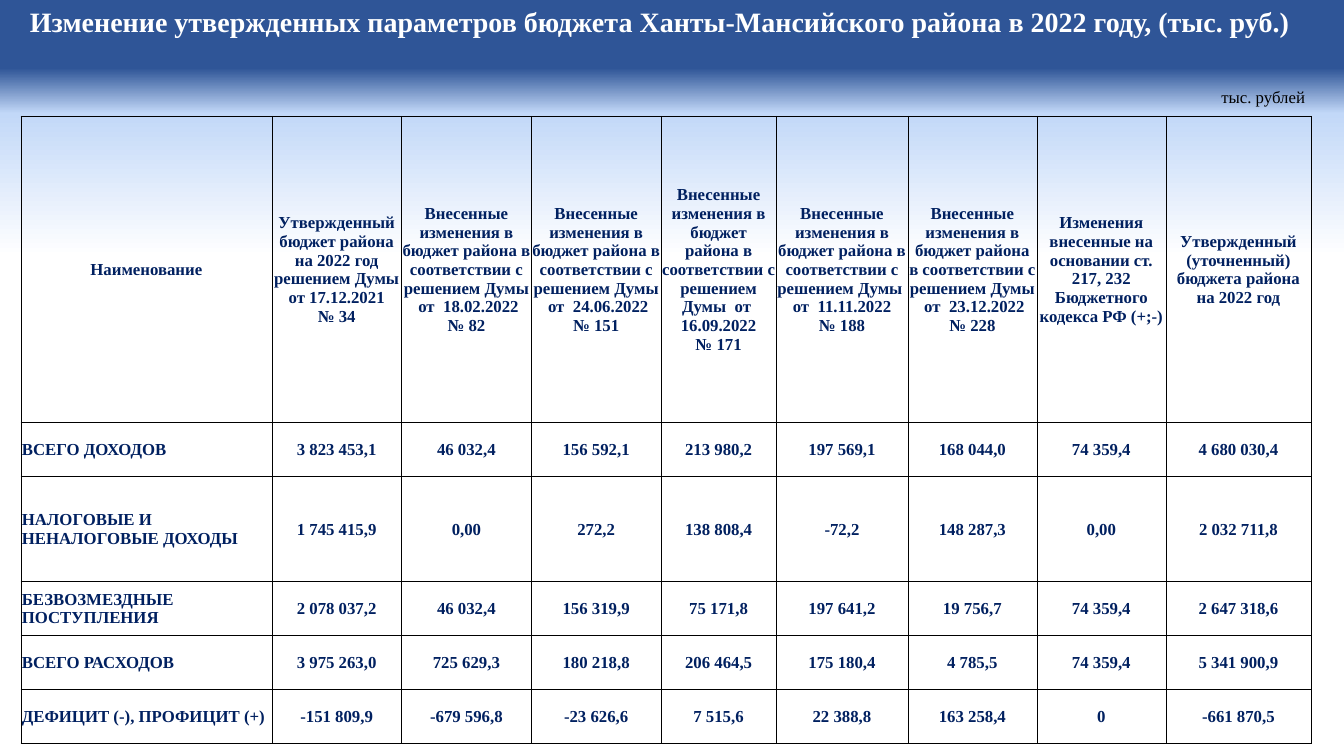
from pptx import Presentation
from pptx.dml.color import RGBColor
from pptx.enum.text import MSO_ANCHOR, PP_ALIGN
from pptx.oxml import parse_xml
from pptx.oxml.ns import nsdecls
from pptx.util import Cm, Pt

TITLE = "Изменение утвержденных параметров бюджета Ханты-Мансийского района в 2022 году, (тыс. руб.)"
UNIT = "тыс. рублей"

AMENDMENTS = [
    ("18.02.2022", "82"),
    ("24.06.2022", "151"),
    ("16.09.2022", "171"),
    ("11.11.2022", "188"),
    ("23.12.2022", "228"),
]
HEADER = [
    "Наименование",
    "Утвержденный бюджет района на 2022 год решением Думы от 17.12.2021\v№ 34",
    *(
        f"Внесенные изменения в бюджет района в соответствии с решением Думы  от  {date}\n№ {number}"
        for date, number in AMENDMENTS
    ),
    "Изменения внесенные на основании ст. 217, 232 Бюджетного кодекса РФ (+;-)",
    "Утвержденный (уточненный) бюджета района на 2022 год",
]
BUDGET = [
    ("ВСЕГО ДОХОДОВ", "3 823 453,1", "46 032,4", "156 592,1", "213 980,2",
     "197 569,1", "168 044,0", "74 359,4", "4 680 030,4"),
    ("НАЛОГОВЫЕ И НЕНАЛОГОВЫЕ ДОХОДЫ", "1 745 415,9", "0,00", "272,2", "138 808,4",
     "-72,2", "148 287,3", "0,00", "2 032 711,8"),
    ("БЕЗВОЗМЕЗДНЫЕ ПОСТУПЛЕНИЯ", "2 078 037,2", "46 032,4", "156 319,9", "75 171,8",
     "197 641,2", "19 756,7", "74 359,4", "2 647 318,6"),
    ("ВСЕГО РАСХОДОВ", "3 975 263,0", "725 629,3", "180 218,8", "206 464,5",
     "175 180,4", "4 785,5", "74 359,4", "5 341 900,9"),
    ("ДЕФИЦИТ (-), ПРОФИЦИТ (+)", "-151 809,9", "-679 596,8", "-23 626,6", "7 515,6",
     "22 388,8", "163 258,4", "0", "-661 870,5"),
]

COLORS = {
    "band": "2F5597",
    "sky": "C2D8F8",
    "white": "FFFFFF",
    "navy": "002060",
    "black": "000000",
}
GRADIENT = [(9, "band"), (15, "sky"), (34, "white")]
FONT = "Times New Roman"
COLUMN_WIDTHS = [6.32, 3.27, 3.27, 3.27, 2.9, 3.32, 3.25, 3.25, 3.66]
ROW_HEIGHTS = [7.72, 1.36, 2.64, 1.36, 1.36, 1.36]


def paint_background(slide):
    stops = "".join(
        f'<a:gs pos="{percent * 1000}"><a:srgbClr val="{COLORS[name]}"/></a:gs>'
        for percent, name in GRADIENT
    )
    background = parse_xml(
        f'<p:bg {nsdecls("p", "a")}><p:bgPr><a:gradFill rotWithShape="1">'
        f'<a:gsLst>{stops}</a:gsLst><a:lin ang="5400000" scaled="0"/>'
        "</a:gradFill><a:effectLst/></p:bgPr></p:bg>"
    )
    slide.element.cSld.insert(0, background)


def format_text(text_frame, size, color, bold, alignment):
    for paragraph in text_frame.paragraphs:
        paragraph.alignment = alignment
        for run in paragraph.runs:
            run.font.name = FONT
            run.font.size = Pt(size)
            run.font.bold = bold
            run.font.color.rgb = RGBColor.from_string(COLORS[color])


def add_label(slide, text, box, size, color, bold, alignment):
    label = slide.shapes.add_textbox(*(Cm(length) for length in box))
    label.text_frame.word_wrap = True
    label.text_frame.text = text
    format_text(label.text_frame, size, color, bold, alignment)


def add_borders(cell):
    properties = cell._tc.get_or_add_tcPr()
    for position, side in enumerate(("lnL", "lnR", "lnT", "lnB")):
        border = parse_xml(
            f'<a:{side} {nsdecls("a")} w="{Pt(0.5)}"><a:solidFill>'
            f'<a:srgbClr val="{COLORS["black"]}"/></a:solidFill></a:{side}>'
        )
        properties.insert(position, border)


def add_budget_table(slide):
    rows = [HEADER, *BUDGET]
    table = slide.shapes.add_table(
        len(rows), len(HEADER), Cm(0.53), Cm(2.93),
        Cm(sum(COLUMN_WIDTHS)), Cm(sum(ROW_HEIGHTS)),
    ).table
    table.first_row = table.horz_banding = False
    for column, width in zip(table.columns, COLUMN_WIDTHS):
        column.width = Cm(width)
    for row, height in zip(table.rows, ROW_HEIGHTS):
        row.height = Cm(height)

    for row_index, texts in enumerate(rows):
        for column_index, text in enumerate(texts):
            cell = table.cell(row_index, column_index)
            cell.text_frame.text = text
            cell.fill.background()
            cell.vertical_anchor = MSO_ANCHOR.MIDDLE
            cell.margin_left = cell.margin_right = cell.margin_top = Cm(0.02)
            cell.margin_bottom = Cm(0)
            is_row_name = row_index > 0 and column_index == 0
            alignment = PP_ALIGN.LEFT if is_row_name else PP_ALIGN.CENTER
            format_text(cell.text_frame, 12, "navy", True, alignment)
            add_borders(cell)


def main():
    presentation = Presentation()
    presentation.slide_width = Cm(33.87)
    presentation.slide_height = Cm(19.05)
    slide = presentation.slides.add_slide(presentation.slide_layouts[6])
    paint_background(slide)
    add_label(slide, TITLE, (0.33, 0, 32.61, 1.11), 20, "white", True, PP_ALIGN.CENTER)
    add_budget_table(slide)
    add_label(slide, UNIT, (30.53, 2.06, 2.9, 0.77), 12, "black", False, PP_ALIGN.LEFT)
    presentation.save("out.pptx")


if __name__ == "__main__":
    main()
